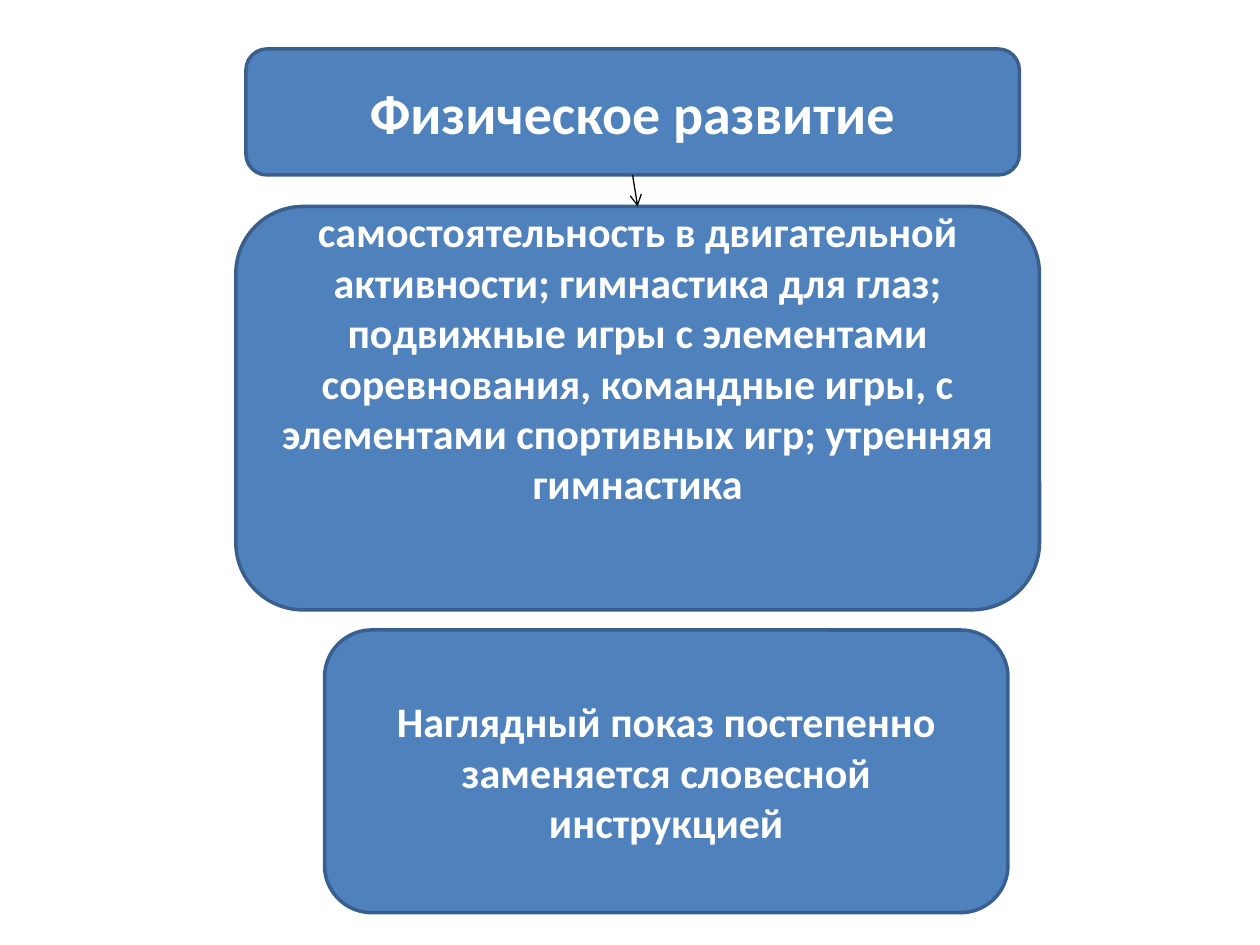
from dataclasses import dataclass

from lxml.etree import SubElement
from pptx import Presentation
from pptx.dml.color import RGBColor
from pptx.enum.shapes import MSO_CONNECTOR, MSO_SHAPE
from pptx.enum.text import MSO_ANCHOR, PP_ALIGN
from pptx.oxml.ns import qn
from pptx.util import Pt


@dataclass(frozen=True)
class Theme:
    font: str = "Calibri"
    title_size: int = 32
    body_size: int = 24
    fill: str = "4F81BD"
    border: str = "3A5F8C"
    dark_border: str = "376092"
    text: str = "FFFFFF"
    arrow: str = "000000"
    border_width: float = 2
    arrow_width: float = 0.75


class SlideBuilder:
    def __init__(self, slide, theme):
        self.slide = slide
        self.theme = theme

    def box(self, text, left, top, width, height, size, border, bottom_inset=3.6):
        """Add a rounded box; a larger bottom inset lifts its centred text."""
        t = self.theme
        sp = self.slide.shapes.add_shape(
            MSO_SHAPE.ROUNDED_RECTANGLE, Pt(left), Pt(top), Pt(width), Pt(height))
        sp.shadow.inherit = False
        sp.fill.solid()
        sp.fill.fore_color.rgb = RGBColor.from_string(t.fill)
        sp.line.color.rgb = RGBColor.from_string(border)
        sp.line.width = Pt(t.border_width)

        tf = sp.text_frame
        tf.word_wrap = True
        tf.vertical_anchor = MSO_ANCHOR.MIDDLE
        tf.margin_bottom = Pt(bottom_inset)
        p = tf.paragraphs[0]
        p.text = text
        p.alignment = PP_ALIGN.CENTER
        p.font.name = t.font
        p.font.size = Pt(size)
        p.font.bold = True
        p.font.color.rgb = RGBColor.from_string(t.text)
        return sp

    def arrow(self, upper, lower):
        """Join the bottom centre of one box to the top centre of another."""
        t = self.theme
        cxn = self.slide.shapes.add_connector(MSO_CONNECTOR.STRAIGHT, 0, 0, 0, 0)
        cxn.begin_connect(upper, 2)
        cxn.end_connect(lower, 0)
        cxn.line.color.rgb = RGBColor.from_string(t.arrow)
        cxn.line.width = Pt(t.arrow_width)
        SubElement(cxn.line._get_or_add_ln(), qn("a:tailEnd"), type="arrow")
        SubElement(cxn._element.spPr, qn("a:effectLst"))


def main():
    prs = Presentation()
    prs.slide_width, prs.slide_height = Pt(720), Pt(540)
    theme = Theme()
    s = SlideBuilder(prs.slides.add_slide(prs.slide_layouts[6]), theme)

    activities = s.box(
        "самостоятельность в двигательной активности; гимнастика для глаз; "
        "подвижные игры с элементами соревнования, командные игры, "
        "с элементами спортивных игр; утренняя гимнастика",
        134.75, 118, 459.25, 230.5, theme.body_size, theme.border, bottom_inset=62)
    heading = s.box("Физическое развитие", 140.5, 28, 442, 72,
                    theme.title_size, theme.border)
    s.box("Наглядный показ постепенно заменяется словесной инструкцией",
          185.5, 360, 390.5, 161.5, theme.body_size, theme.dark_border)
    s.arrow(heading, activities)

    prs.save("out.pptx")


if __name__ == "__main__":
    main()
